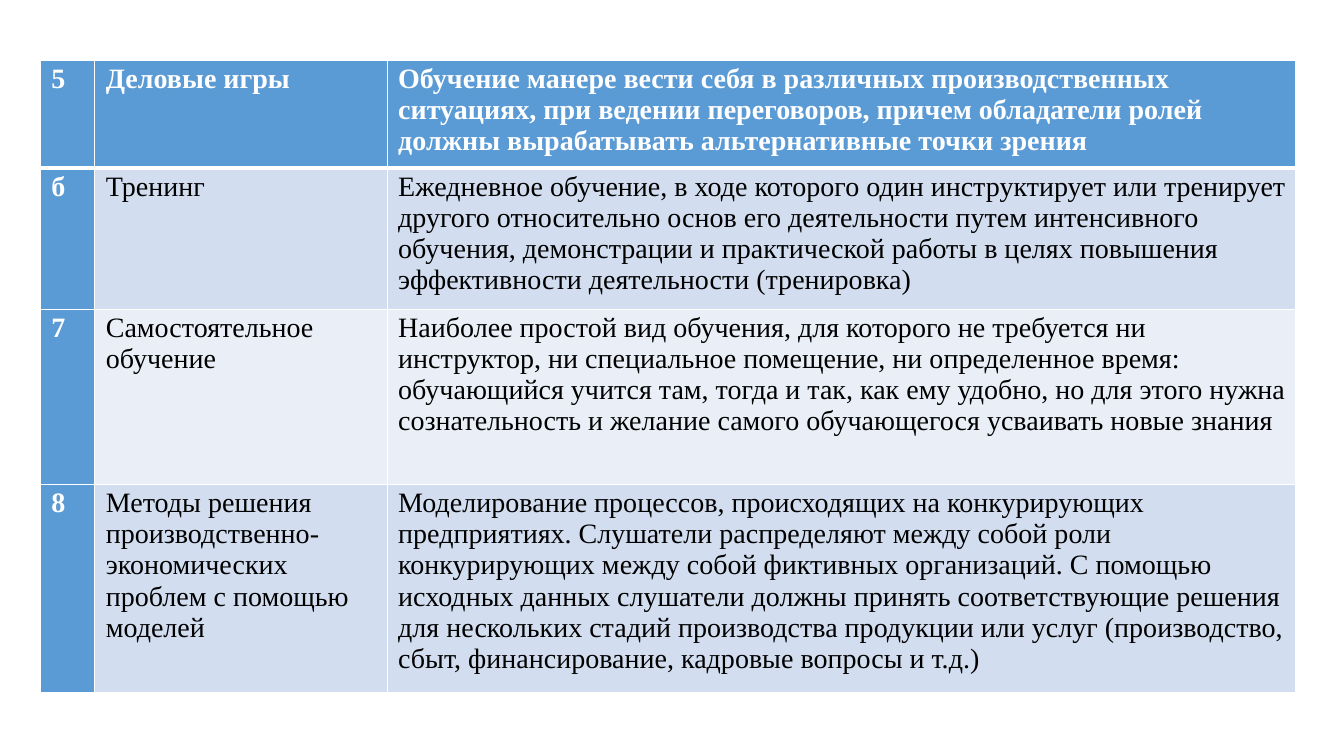
from lxml import etree
from pptx import Presentation
from pptx.dml.color import RGBColor
from pptx.enum.text import MSO_ANCHOR, PP_ALIGN
from pptx.oxml.ns import qn
from pptx.util import Inches, Pt

TOP = MSO_ANCHOR.TOP
LEFT = PP_ALIGN.LEFT

WHITE = "FFFFFF"
BLACK = "000000"
BLUE = "5B9BD5"
BANDS = ("EAEFF7", "D2DEEF")

COLUMN_WIDTHS = (0.54, 2.9, 9.01)
ROW_HEIGHTS = (1.07, 1.4, 1.74, 2.06)
METHODS = (
    ("5", "Деловые игры",
     "Обучение манере вести себя в различных производственных ситуациях, "
     "при ведении переговоров, причем обладатели ролей должны вырабатывать "
     "альтернативные точки зрения"),
    ("б", "Тренинг",
     "Ежедневное обучение, в ходе которого один инструктирует или тренирует "
     "другого относительно основ его деятельности путем интенсивного обучения, "
     "демонстрации и практической работы в целях повышения эффективности "
     "деятельности (тренировка)"),
    ("7", "Самостоятельное обучение",
     "Наиболее простой вид обучения, для которого не требуется ни инструктор, "
     "ни специальное помещение, ни определенное время: обучающийся учится там, "
     "тогда и так, как ему удобно, но для этого нужна сознательность и желание "
     "самого обучающегося усваивать новые знания"),
    ("8", "Методы решения производственно- экономических проблем с помощью моделей",
     "Моделирование процессов, происходящих на конкурирующих предприятиях. "
     "Слушатели распределяют между собой роли конкурирующих между собой "
     "фиктивных организаций. С помощью исходных данных слушатели должны принять "
     "соответствующие решения для нескольких стадий производства продукции или "
     "услуг (производство, сбыт, финансирование, кадровые вопросы и т.д.)"),
)


def color(value):
    return RGBColor.from_string(value)


class SlideBuilder:
    font_name = "Times New Roman"
    font_size = Pt(20)

    def __init__(self, slide):
        self.slide = slide

    def border(self, cell, side, width):
        line = etree.SubElement(cell._tc.get_or_add_tcPr(), qn(f"a:ln{side}"), w=str(Pt(width)))
        fill = etree.SubElement(line, qn("a:solidFill"))
        etree.SubElement(fill, qn("a:srgbClr"), val=WHITE)

    def cell(self, cell, text, fill, text_color, bold, top_width, bottom_width):
        for side, width in (("L", 1), ("R", 1), ("T", top_width), ("B", bottom_width)):
            self.border(cell, side, width)
        cell.fill.solid()
        cell.fill.fore_color.rgb = color(fill)
        cell.margin_left = cell.margin_right = Inches(0.07)
        cell.margin_top = cell.margin_bottom = Inches(0.03)
        cell.vertical_anchor = TOP
        para = cell.text_frame.paragraphs[0]
        para.alignment = LEFT
        para.space_after = Pt(3)
        para._p.get_or_add_pPr().set("marL", str(Inches(0.04)))
        span = para.add_run()
        span.text = text
        span.font.name = self.font_name
        span.font.size = self.font_size
        span.font.bold = bold
        span.font.color.rgb = color(text_color)

    def table(self, left, top, widths, heights, rows):
        frame = self.slide.shapes.add_table(
            len(rows), len(widths), Inches(left), Inches(top),
            Inches(sum(widths)), Inches(sum(heights)))
        table = frame.table
        table.first_col = True
        for column, width in zip(table.columns, widths):
            column.width = Inches(width)
        for row, height in zip(table.rows, heights):
            row.height = Inches(height)
        for i, texts in enumerate(rows):
            for j, text in enumerate(texts):
                heading = i == 0 or j == 0
                self.cell(
                    table.cell(i, j), text,
                    fill=BLUE if heading else BANDS[i % 2],
                    text_color=WHITE if heading else BLACK,
                    bold=heading,
                    top_width=3 if i == 1 else 1,
                    bottom_width=3 if i == 0 else 1)


def main():
    deck = Presentation()
    deck.slide_width = Inches(13.33)
    deck.slide_height = Inches(7.5)
    page = SlideBuilder(deck.slides.add_slide(deck.slide_layouts[6]))
    page.table(0.4, 0.6, COLUMN_WIDTHS, ROW_HEIGHTS, METHODS)
    deck.save("out.pptx")


if __name__ == "__main__":
    main()
